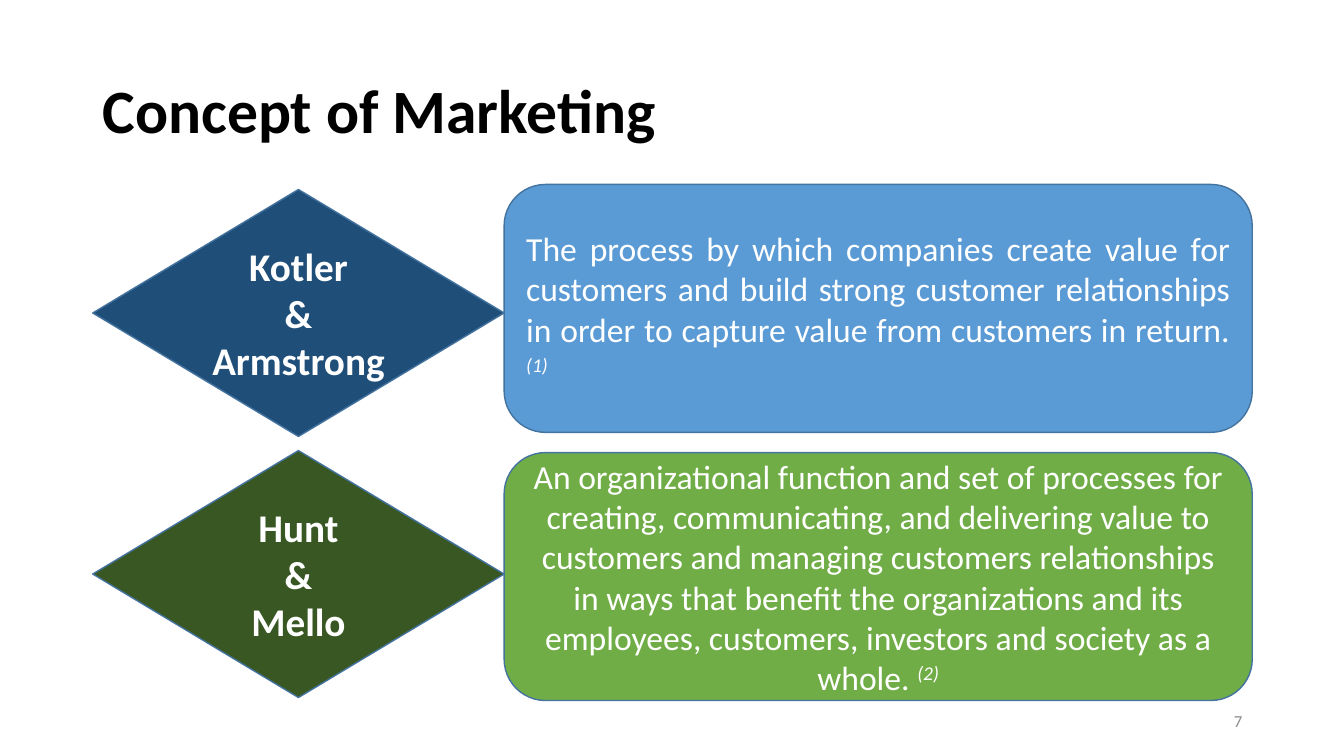
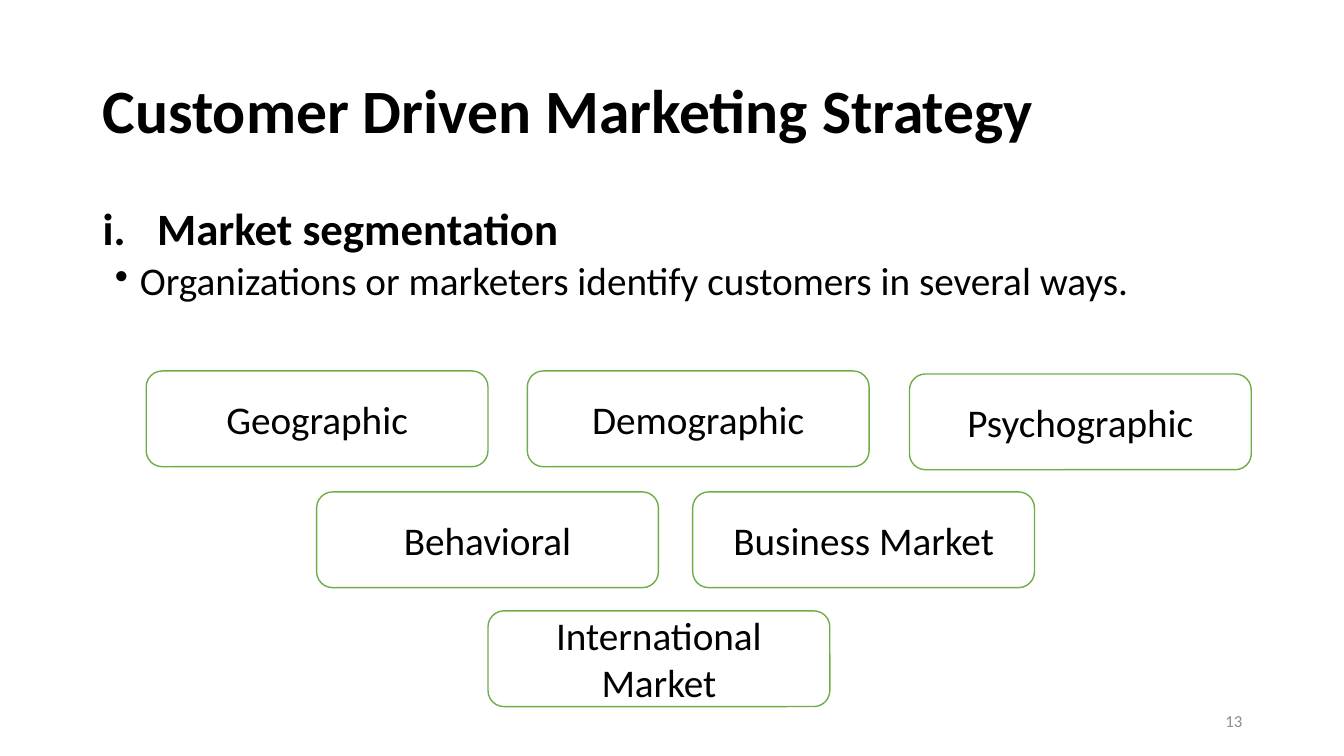
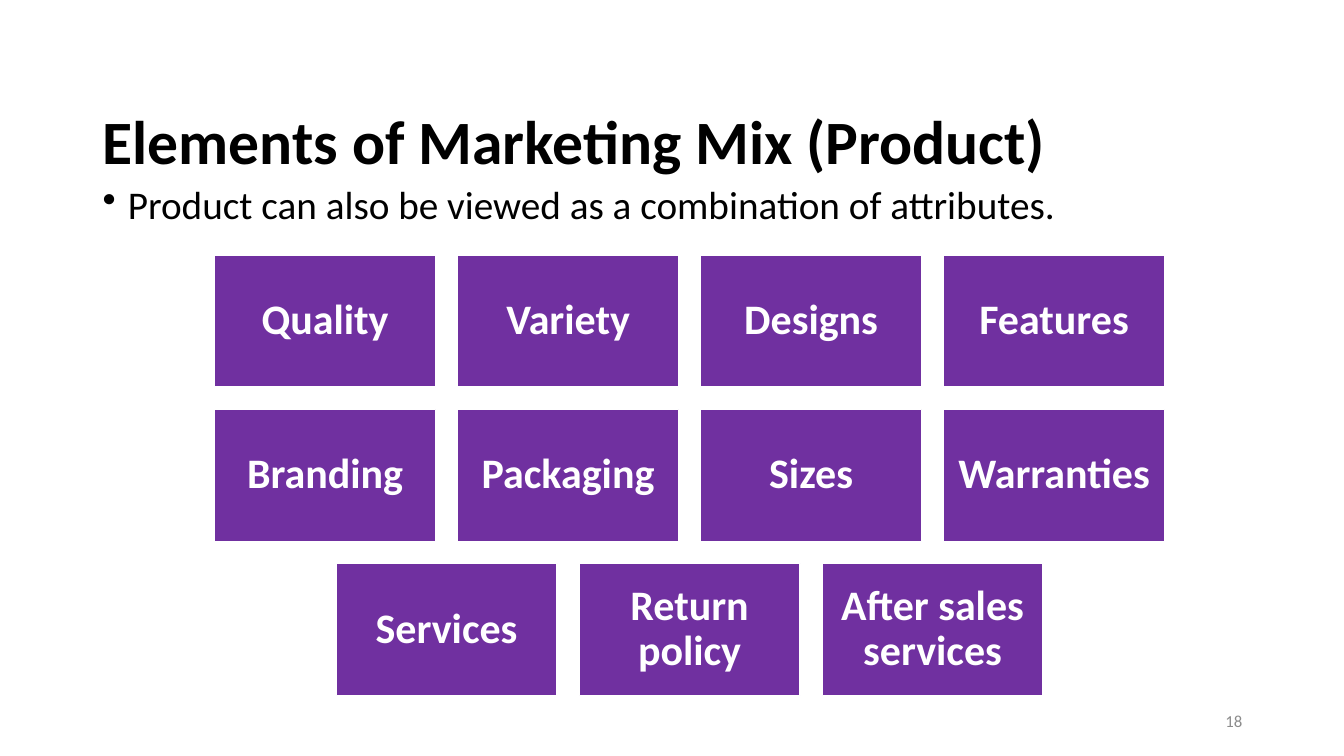
import pptx
import pptx.dml.color
import pptx.enum.shapes
import pptx.enum.text
import pptx.util
import lxml.etree
import pptx.oxml.ns

SHAPE = pptx.enum.shapes.MSO_SHAPE
ALIGN = pptx.enum.text.PP_ALIGN
ANCHOR = pptx.enum.text.MSO_ANCHOR
Inches = pptx.util.Inches


class Theme:
    font = "Calibri"
    # Colours
    black, white, grey = "000000", "FFFFFF", "8C8C8C"
    navy, blue, outline = "1F4E79", "5B9BD5", "43739E"
    forest, green, purple = "385723", "70AD47", "7030A0"
    # Type sizes
    title, heading, tile, body, definition, footer = 44, 32, 30, 28, 24, 12


def add_box(slide, kind, left, top, width, height, fill=None, line=None,
            anchor=ANCHOR.MIDDLE, inset=0.1):
    """Add a preset shape, or a plain text box when kind is None."""
    area = [Inches(length) for length in (left, top, width, height)]
    if kind is None:
        shape = slide.shapes.add_textbox(*area)
    else:
        shape = slide.shapes.add_shape(kind, *area)
        shape.shadow.inherit = False
        shape.fill.solid()
        shape.fill.fore_color.rgb = pptx.dml.color.RGBColor.from_string(fill)
        shape.line.color.rgb = pptx.dml.color.RGBColor.from_string(line)
        shape.line.width = pptx.util.Pt(1)
    frame = shape.text_frame
    frame.word_wrap = True
    frame.vertical_anchor = anchor
    frame.margin_left = frame.margin_right = Inches(inset)
    return shape


def write(shape, text, size=Theme.body, color=Theme.black, bold=False, align=ALIGN.LEFT,
          spacing=1.0, before=0, indent=0, hanging=0, bullet=None, note=None):
    """Add one paragraph to a shape, with an optional raised note at its end."""
    frame = shape.text_frame
    paragraph = frame.paragraphs[0] if not frame.text else frame.add_paragraph()
    paragraph.alignment = align
    paragraph.line_spacing = spacing
    paragraph.space_before = pptx.util.Pt(before)
    properties = paragraph._p.get_or_add_pPr()
    if hanging:
        properties.set("marL", str(Inches(indent)))
        properties.set("indent", str(-Inches(hanging)))
    if bullet:
        mark = lxml.etree.SubElement(properties, pptx.oxml.ns.qn("a:buChar"))
        mark.set("char", bullet)
    for part in filter(None, (text, note)):
        run = paragraph.add_run()
        run.text = part
        run.font.name = Theme.font
        run.font.size = pptx.util.Pt(size)
        run.font.bold = bold
        run.font.color.rgb = pptx.dml.color.RGBColor.from_string(color)
        if part == note:
            run.font.italic = True
            run._r.get_or_add_rPr().set("baseline", "30000")


# Page and the frame that all slides share
presentation = pptx.Presentation()
presentation.slide_width = Inches(13.33)
presentation.slide_height = Inches(7.5)
margin, content_width = 0.92, 11.5
content_right = margin + content_width

slides = []
for title, title_top, number in (
    ("Concept of Marketing", 0.4, 7),
    ("Customer Driven Marketing Strategy", 0.4, 13),
    ("Elements of Marketing Mix (Product)", 0.71, 18),
):
    slide = presentation.slides.add_slide(presentation.slide_layouts[6])
    title_box = add_box(slide, None, margin, title_top, content_width, 1.45)
    write(title_box, title, size=Theme.title, bold=True, spacing=0.9)
    number_box = add_box(slide, None, content_right - 3, 6.95, 3, 0.4)
    write(number_box, str(number), size=Theme.footer, color=Theme.grey, align=ALIGN.RIGHT)
    slides.append(slide)
concept_slide, strategy_slide, mix_slide = slides

# Concept: authors in the left column, their definition in the right one
author_width = 4.08
definition_left = margin + author_width
for authors, author_top, author_fill, definition, note, definition_top, definition_fill, align in (
    (("Kotler", "&", "Armstrong"), 1.88, Theme.navy,
     "The process by which companies create value for customers and build strong customer "
     "relationships in order to capture value from customers in return. ",
     "(1)", 1.83, Theme.blue, ALIGN.JUSTIFY),
    (("Hunt", "&", "Mello"), 4.47, Theme.forest,
     "An organizational function and set of processes for creating, communicating, and "
     "delivering value to customers and managing customers relationships in ways that benefit "
     "the organizations and its employees, customers, investors and society as a whole. ",
     "(2)", 4.49, Theme.green, ALIGN.CENTER),
):
    diamond = add_box(concept_slide, SHAPE.FLOWCHART_DECISION, margin, author_top,
                      author_width, 2.45, author_fill, Theme.outline)
    for line in authors:
        write(diamond, line, color=Theme.white, bold=True, align=ALIGN.CENTER)
    panel = add_box(concept_slide, SHAPE.ROUNDED_RECTANGLE, definition_left, definition_top,
                    content_right - definition_left, 2.46, definition_fill, Theme.outline)
    write(panel, definition, size=Theme.definition, color=Theme.white, align=align, note=note)

# Strategy: heading, point and the segments
body = add_box(strategy_slide, None, margin, 2, content_width, 4.76, anchor=ANCHOR.TOP)
write(body, "i.\tMarket segmentation", size=Theme.heading, bold=True, spacing=0.9,
      indent=0.54, hanging=0.54)
write(body, "Organizations or marketers identify customers in several ways.", spacing=0.9,
      before=5, indent=0.37, hanging=0.25, bullet="•")

segment_width, segment_height = 3.39, 0.95
for left, top, gap, segments in (
    (1.45, 3.68, 0.39, ("Geographic", "Demographic")),
    (9.02, 3.71, 0, ("Psychographic",)),
    (3.14, 4.88, 0.34, ("Behavioral", "Business Market")),
    (4.84, 6.06, 0, ("International Market",)),
):
    for column, segment in enumerate(segments):
        box = add_box(strategy_slide, SHAPE.FLOWCHART_ALTERNATE_PROCESS,
                      left + column * (segment_width + gap), top,
                      segment_width, segment_height, Theme.white, Theme.green)
        write(box, segment, align=ALIGN.CENTER)

# Product mix: point and centred rows of tiles
body = add_box(mix_slide, None, margin, 1.79, content_width, 4.76, anchor=ANCHOR.TOP)
write(body, "Product can also be viewed as a combination of attributes.", spacing=0.9,
      indent=0.25, hanging=0.25, bullet="•")

tile_width, tile_height, tile_gap = 2.19, 1.31, 0.22
grid_center, grid_top = 6.84, 2.53
for row, attributes in enumerate((
    ("Quality", "Variety", "Designs", "Features"),
    ("Branding", "Packaging", "Sizes", "Warranties"),
    ("Services", "Return policy", "After sales services"),
)):
    row_width = len(attributes) * (tile_width + tile_gap) - tile_gap
    for column, attribute in enumerate(attributes):
        tile = add_box(mix_slide, SHAPE.RECTANGLE,
                       grid_center - row_width / 2 + column * (tile_width + tile_gap),
                       grid_top + row * (tile_height + tile_gap),
                       tile_width, tile_height, Theme.purple, Theme.white, inset=0.12)
        write(tile, attribute, size=Theme.tile, color=Theme.white, bold=True,
              align=ALIGN.CENTER, spacing=0.9)

presentation.save("out.pptx")
